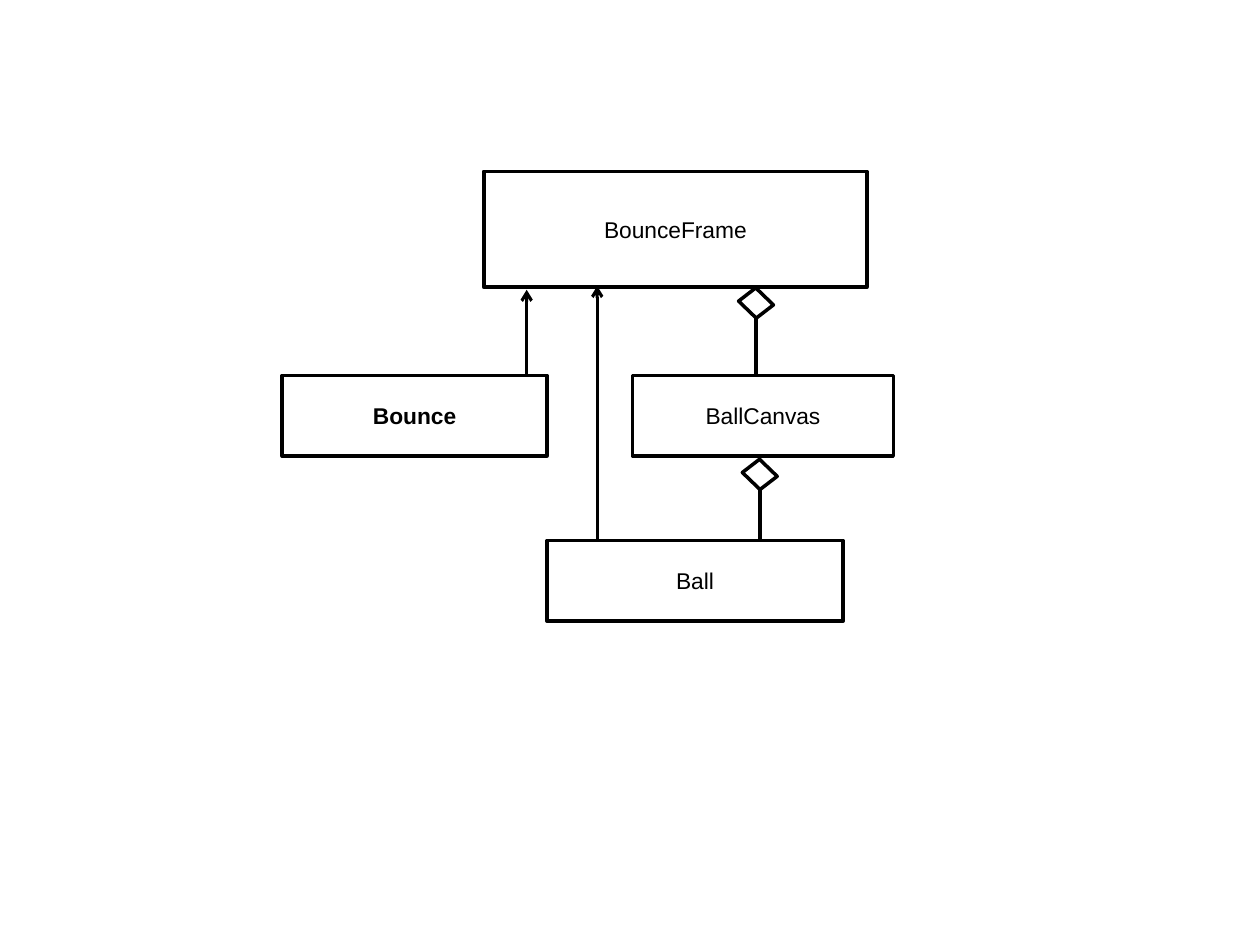
"""Build a UML class diagram of the Bounce program."""
from lxml import etree
from pptx import Presentation
from pptx.dml.color import RGBColor
from pptx.enum.shapes import MSO_CONNECTOR, MSO_SHAPE
from pptx.enum.text import MSO_ANCHOR, PP_ALIGN
from pptx.oxml.ns import qn
from pptx.util import Inches, Pt

RECT, DIAMOND = MSO_SHAPE.RECTANGLE, MSO_SHAPE.PARALLELOGRAM
STRAIGHT = MSO_CONNECTOR.STRAIGHT
MIDDLE, CENTER = MSO_ANCHOR.MIDDLE, PP_ALIGN.CENTER

COLORS = {"ink": "000000", "paper": "FFFFFF"}
CLASSES = [
    ("Bounce", 2.24, 2.98, 2.1, 0.64, True),
    ("BallCanvas", 5.02, 2.98, 2.07, 0.64, False),
    ("Ball", 4.34, 4.29, 2.35, 0.64, False),
    ("BounceFrame", 3.84, 1.36, 3.04, 0.92, False),
]
USES = [(4.18, 2.98, 2.3), (4.74, 4.29, 2.27)]
AGGREGATIONS = [(6, 2.32, 2.97), (6.03, 3.68, 4.33)]
DIAMOND_W, DIAMOND_H, DIAMOND_TO_LINE = 0.22, 0.17, 0.2


def color(name):
    return RGBColor.from_string(COLORS[name])


def add_box(slide, kind, left, top, width, height):
    s = slide.shapes.add_shape(kind, *map(Inches, (left, top, width, height)))
    s.shadow.inherit = False
    s.fill.solid()
    s.fill.fore_color.rgb = color("paper")
    s.line.color.rgb = color("ink")
    s.line.width = Pt(2)
    return s


def add_class(slide, name, left, top, width, height, bold):
    tf = add_box(slide, RECT, left, top, width, height).text_frame
    tf.vertical_anchor = MIDDLE
    p = tf.paragraphs[0]
    p.text = name
    p.alignment = CENTER
    p.font.name = "Arial"
    p.font.size = Pt(13)
    p.font.bold = bold
    p.font.color.rgb = color("ink")


def add_link(slide, x, start, end, width, arrow=False):
    c = slide.shapes.add_connector(STRAIGHT, *map(Inches, (x, start, x, end)))
    c.line.color.rgb = color("ink")
    c.line.width = Pt(width)
    if arrow:
        etree.SubElement(c.line._get_or_add_ln(), qn("a:tailEnd"), type="arrow")
    etree.SubElement(c._element.spPr, qn("a:effectLst"))


def add_aggregation(slide, x, top, end):
    s = add_box(slide, DIAMOND, x - DIAMOND_W / 2, top, DIAMOND_W, DIAMOND_H)
    s.adjustments[0] = 0.148
    s.rotation = 44
    add_link(slide, x, top + DIAMOND_TO_LINE, end, 2)


def main():
    prs = Presentation()
    prs.slide_width, prs.slide_height = Inches(10), Inches(7.5)
    slide = prs.slides.add_slide(prs.slide_layouts[6])
    for x, start, end in USES:
        add_link(slide, x, start, end, 1.75, arrow=True)
    for aggregation in AGGREGATIONS:
        add_aggregation(slide, *aggregation)
    for item in CLASSES:
        add_class(slide, *item)
    prs.save("out.pptx")


if __name__ == "__main__":
    main()
